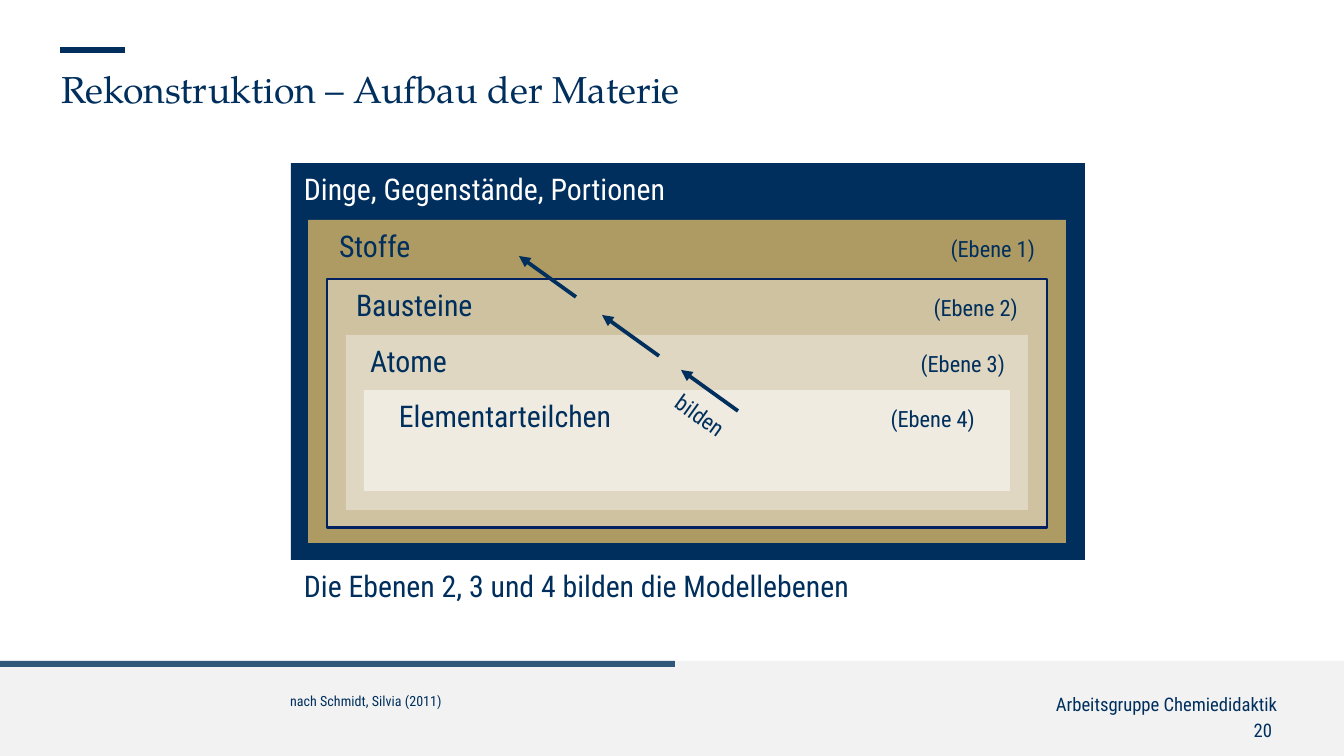
from lxml.etree import SubElement
from pptx import Presentation
from pptx.dml.color import RGBColor
from pptx.enum.shapes import MSO_CONNECTOR, MSO_SHAPE
from pptx.enum.text import MSO_ANCHOR, PP_ALIGN
from pptx.oxml.ns import qn
from pptx.util import Pt

PX = 914400 / 134.4
SANS, SERIF = "Roboto Condensed", "TeX Gyre Pagella"
COLORS = {
    "navy": "002F5D", "border": "002060", "white": "FFFFFF", "footer": "F2F2F2",
    "gold": "AE9A63", "sand": "CEC2A1", "beige": "DFD7C1", "cream": "EFEBE0",
}

TITLE = "Rekonstruktion – Aufbau der Materie"
LEVELS = [
    ("Dinge, Gegenstände, Portionen", "", "navy", "white", (291, 163, 794, 397), 304, 1060),
    ("Stoffe", "(Ebene 1)", "gold", "navy", (308, 220, 758, 323), 339, 1035),
    ("Bausteine", "(Ebene 2)", "sand", "navy", (327, 279, 720, 249), 356, 1018),
    ("Atome", "(Ebene 3)", "beige", "navy", (346, 335, 682, 175), 370, 1005),
    ("Elementarteilchen", "(Ebene 4)", "cream", "navy", (364, 390, 646, 101), 399, 975),
]
BORDERED = "Bausteine"
ARROW_STARTS = [(738, 411), (659, 356), (576, 297)]
ARROW_STEP = (-57, -41)
CAPTIONS = [
    ("Die Ebenen 2, 3 und 4 bilden die Modellebenen", 16, PP_ALIGN.LEFT, (304, 568, 600, 36), 0),
    ("bilden", 12, PP_ALIGN.CENTER, (632, 402, 137, 26), 35.7),
    ("nach Schmidt, Silvia (2011)", 7.5, PP_ALIGN.LEFT, (290, 693, 500, 17), 0),
    ("Arbeitsgruppe Chemiedidaktik", 10, PP_ALIGN.RIGHT, (677, 693, 600, 22), 0),
    ("20", 10, PP_ALIGN.RIGHT, (1172, 719, 100, 22), 0),
]


def px(value):
    return round(value * PX)


def rgb(name):
    return RGBColor.from_string(COLORS[name])


def add_run(paragraph, text, size, color="navy", font=SANS):
    run = paragraph.add_run()
    run.text = text
    run.font.size, run.font.name = Pt(size), font
    run.font.color.rgb = rgb(color)


def clear_insets(frame):
    frame.margin_left = frame.margin_right = 0
    frame.margin_top = frame.margin_bottom = 0
    frame.word_wrap = True


def add_rectangle(slide, place, color):
    rectangle = slide.shapes.add_shape(MSO_SHAPE.RECTANGLE, *map(px, place))
    rectangle.shadow.inherit = False
    rectangle.fill.solid()
    rectangle.fill.fore_color.rgb = rgb(color)
    rectangle.line.fill.background()
    return rectangle


def add_line(slide, start, end, width, arrow=False):
    line = slide.shapes.add_connector(MSO_CONNECTOR.STRAIGHT, *map(px, start + end))
    line.line.color.rgb = rgb("navy")
    line.line.width = Pt(width)
    properties = line._element.spPr
    if arrow:
        SubElement(properties.find(qn("a:ln")), qn("a:tailEnd"), type="triangle")
    SubElement(properties, qn("a:effectLst"))


def add_level(slide, label, level, fill, color, place, text_left, text_right):
    box = add_rectangle(slide, place, fill)
    if label == BORDERED:
        box.line.color.rgb = rgb("border")
        box.line.width = Pt(1.5)
    frame = box.text_frame
    clear_insets(frame)
    frame.vertical_anchor = MSO_ANCHOR.TOP
    frame.margin_left, frame.margin_top = px(text_left - place[0]), px(8)
    paragraph = frame.paragraphs[0]
    paragraph.alignment = PP_ALIGN.LEFT
    if level:
        tabs = SubElement(paragraph._p.get_or_add_pPr(), qn("a:tabLst"))
        SubElement(tabs, qn("a:tab"), pos=str(px(text_right - text_left)), algn="r")
        label += "\t"
    add_run(paragraph, label, 16, color)
    if level:
        add_run(paragraph, level, 12, color)


def add_caption(slide, text, size, alignment, place, rotation):
    caption = slide.shapes.add_textbox(*map(px, place))
    caption.rotation = rotation
    clear_insets(caption.text_frame)
    paragraph = caption.text_frame.paragraphs[0]
    paragraph.alignment = alignment
    add_run(paragraph, text, size)


def main():
    deck = Presentation()
    deck.slide_width, deck.slide_height = px(1344), px(756)
    slide = deck.slides.add_slide(deck.slide_layouts[5])

    title = slide.shapes.title
    title.left, title.top, title.width, title.height = map(px, (61, 66, 941, 46))
    clear_insets(title.text_frame)
    title.text_frame.vertical_anchor = MSO_ANCHOR.TOP
    heading = title.text_frame.paragraphs[0]
    heading.alignment = PP_ALIGN.LEFT
    add_run(heading, TITLE, 20, font=SERIF)

    add_rectangle(slide, (0, 661, 1344, 95), "footer")
    progress = add_rectangle(slide, (0, 661, 675, 6), "navy")
    tint = progress._element.spPr.find(qn("a:solidFill")).find(qn("a:srgbClr"))
    SubElement(tint, qn("a:alpha"), val="80000")
    add_line(slide, (60, 50), (125, 50), 3.5)

    for level in LEVELS:
        add_level(slide, *level)
    for x, y in ARROW_STARTS:
        add_line(slide, (x, y), (x + ARROW_STEP[0], y + ARROW_STEP[1]), 2, arrow=True)
    for caption in CAPTIONS:
        add_caption(slide, *caption)

    deck.save("out.pptx")


if __name__ == "__main__":
    main()
